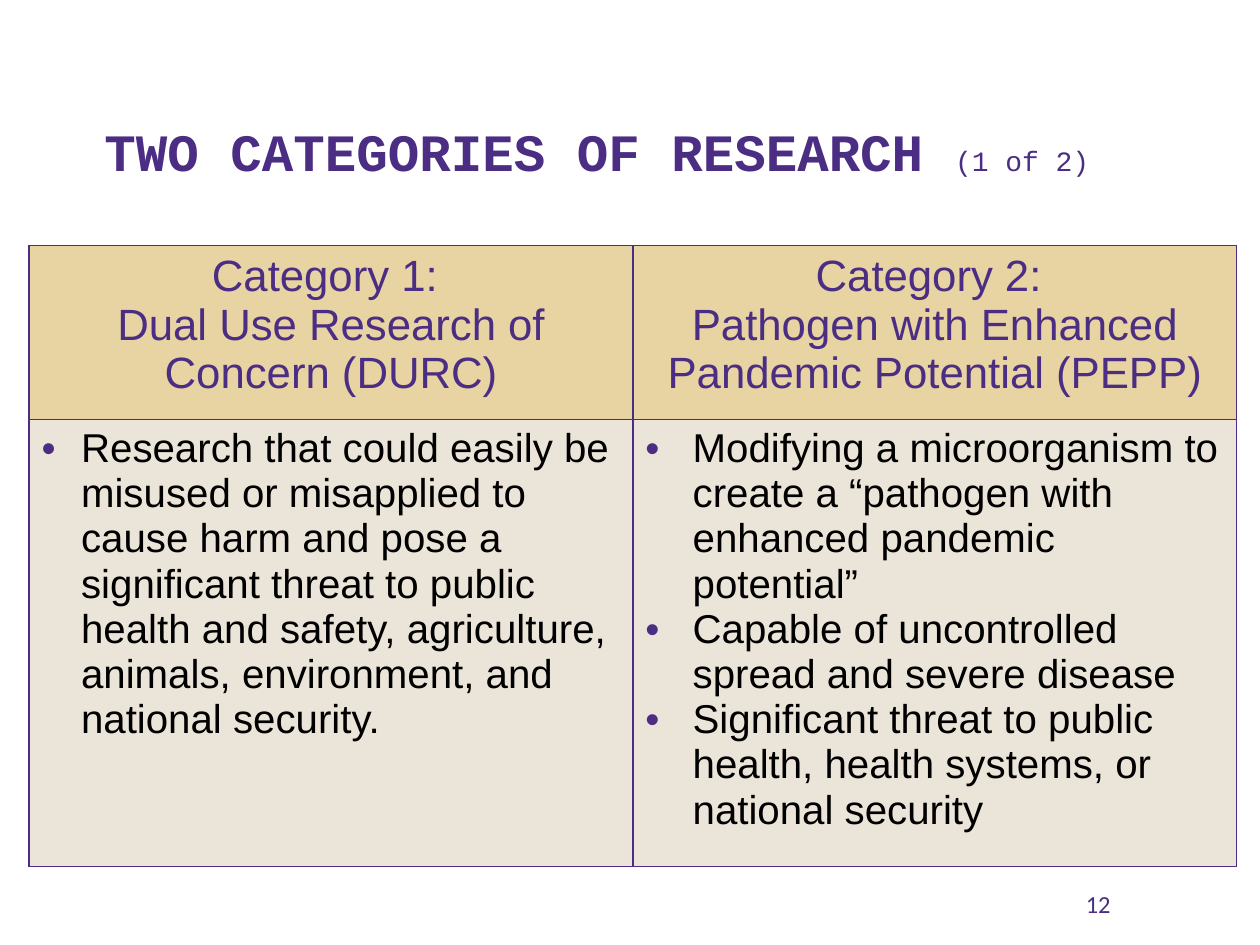
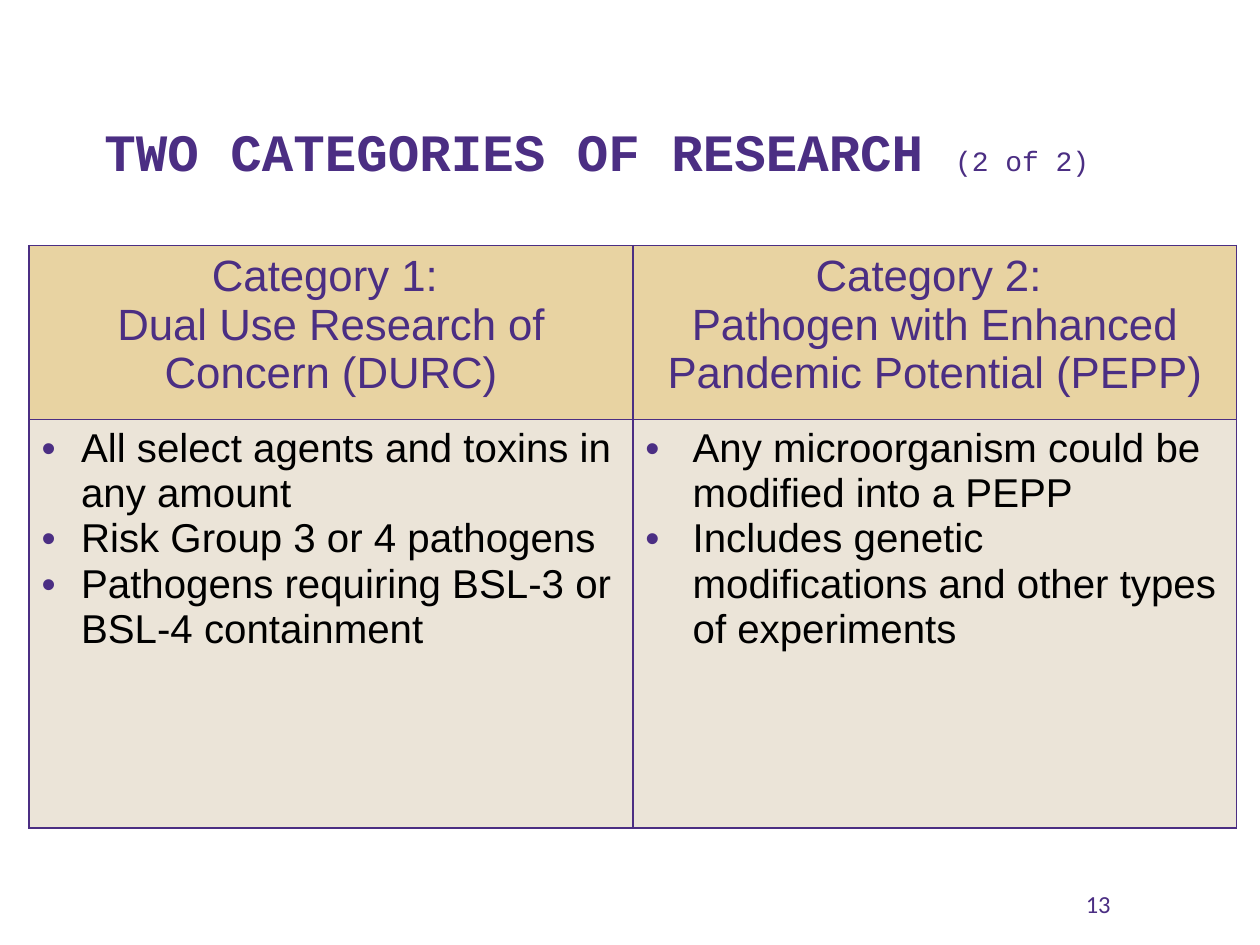
from lxml import etree
from pptx import Presentation
from pptx.dml.color import RGBColor
from pptx.enum.text import MSO_ANCHOR, PP_ALIGN
from pptx.oxml.ns import qn
from pptx.util import Pt

CENTER = PP_ALIGN.CENTER
TOP, BOTTOM = MSO_ANCHOR.TOP, MSO_ANCHOR.BOTTOM
PURPLE, GOLD, SAND, BLACK = "4B2E83", "E8D3A2", "EBE4D8", "000000"
COL, ROWS = 345, (99.4, 233.3)
INDENTS = (22.5, 27)
HEADS = (
    ("Category 1: ", "Dual Use Research of Concern (DURC)"),
    ("Category 2: ", "Pathogen with Enhanced Pandemic Potential (PEPP)"),
)
SLIDES = (
    (
        ("Research that could easily be misused or misapplied to cause harm and pose "
         "a significant threat to public health and safety, agriculture, animals, "
         "environment, and national security.",),
        ("Modifying a microorganism to create a “pathogen with enhanced pandemic potential”",
         "Capable of uncontrolled spread and severe disease",
         "Significant threat to public health, health systems, or national security"),
    ),
    (
        ("All select agents and toxins in any amount",
         "Risk Group 3 or 4 pathogens",
         "Pathogens requiring BSL-3 or BSL-4 containment"),
        ("Any microorganism could be modified into a PEPP",
         "Includes genetic modifications and other types of experiments"),
    ),
)


def color(code):
    """Turn a hex string into a colour."""
    return RGBColor.from_string(code)


def add_run(para, text, size, face="Arial", tint=PURPLE, bold=False):
    """Add one styled run to a paragraph."""
    run = para.add_run()
    run.text = text
    font = run.font
    font.size, font.name, font.bold = Pt(size), face, bold
    font.color.rgb = color(tint)


def add_box(slide, left, top, width, height, anchor=TOP, wrap=True):
    """Add a text box and return its first paragraph."""
    box = slide.shapes.add_textbox(Pt(left), Pt(top), Pt(width), Pt(height))
    frame = box.text_frame
    frame.word_wrap, frame.vertical_anchor = wrap, anchor
    return frame.paragraphs[0]


def add_title(slide, part, total):
    """Add the slide title with its part count."""
    para = add_box(slide, 52.6, 29.5, 644.4, 77.8, BOTTOM)
    add_run(para, "TWO CATEGORIES OF RESEARCH ", 30, "Courier New", bold=True)
    add_run(para, f"({part} of {total})", 16, "Courier New")


def add_number(slide, number):
    """Add the slide number in the footer."""
    para = add_box(slide, 613.4, 504.7, 31, 24.5, wrap=False)
    add_run(para, str(number), 14, "Calibri")


def set_bullet(para, indent):
    """Give a paragraph a hanging purple bullet."""
    props = para._p.get_or_add_pPr()
    props.set("marL", str(Pt(indent)))
    props.set("indent", str(-Pt(indent)))
    tint = etree.SubElement(props, qn("a:buClr"))
    etree.SubElement(tint, qn("a:srgbClr"), val=PURPLE)
    etree.SubElement(props, qn("a:buFont"), typeface="Arial")
    etree.SubElement(props, qn("a:buChar"), char="•")


def style_cell(cell, fill):
    """Draw a purple border round a cell and fill it."""
    props = cell._tc.get_or_add_tcPr()
    for side in ("lnL", "lnR", "lnT", "lnB"):
        line = etree.SubElement(props, qn(f"a:{side}"), w=str(Pt(1)))
        solid = etree.SubElement(line, qn("a:solidFill"))
        etree.SubElement(solid, qn("a:srgbClr"), val=PURPLE)
    cell.fill.solid()
    cell.fill.fore_color.rgb = color(fill)


def add_paras(cell, texts):
    """Yield a paragraph of the cell for each text."""
    frame = cell.text_frame
    for i, text in enumerate(texts):
        yield (frame.add_paragraph() if i else frame.paragraphs[0]), text


def fill_head(cell, lines):
    """Write a category heading."""
    style_cell(cell, GOLD)
    for para, text in add_paras(cell, lines):
        para.alignment = CENTER
        add_run(para, text, 25)


def fill_body(cell, points, indent):
    """Write a bulleted list."""
    style_cell(cell, SAND)
    for para, text in add_paras(cell, points):
        set_bullet(para, indent)
        add_run(para, text, 23, tint=BLACK)


def add_grid(slide, bodies):
    """Add the table that compares both categories."""
    frame = slide.shapes.add_table(
        2, 2, Pt(16.6), Pt(140.4), Pt(2 * COL), Pt(sum(ROWS)))
    table = frame.table
    table.first_row = table.horz_banding = False
    for row, height in zip(table.rows, ROWS):
        row.height = Pt(height)
    for i, (head, body, indent) in enumerate(zip(HEADS, bodies, INDENTS)):
        table.columns[i].width = Pt(COL)
        fill_head(table.cell(0, i), head)
        fill_body(table.cell(1, i), body, indent)


def main():
    """Build and save the slides."""
    deck = Presentation()
    deck.slide_width, deck.slide_height = Pt(720), Pt(540)
    for part, bodies in enumerate(SLIDES, 1):
        slide = deck.slides.add_slide(deck.slide_layouts[6])
        add_number(slide, part + 11)
        add_title(slide, part, len(SLIDES))
        add_grid(slide, bodies)
    deck.save("out.pptx")


if __name__ == "__main__":
    main()
